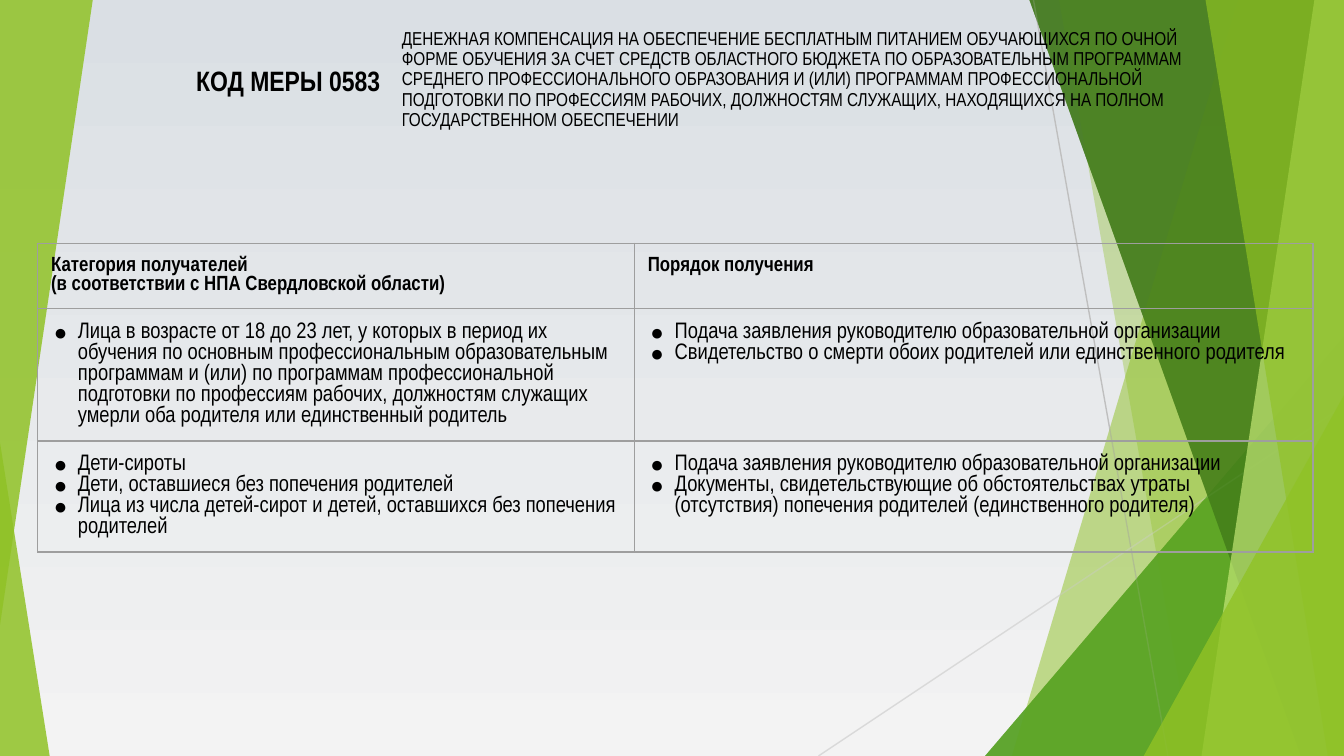
from lxml.etree import SubElement
from pptx import Presentation
from pptx.dml.color import RGBColor
from pptx.enum.shapes import MSO_CONNECTOR, MSO_SHAPE
from pptx.enum.text import MSO_ANCHOR, MSO_AUTO_SIZE, PP_ALIGN
from pptx.oxml.ns import qn
from pptx.util import Inches, Pt

WIDTH = 10
HEIGHT = WIDTH * 9 / 16
FONT = "Arial Narrow"
BLACK = "000000"
BORDER = "9E9E9E"
GREEN = "90C226"

TITLE = (
    "ДЕНЕЖНАЯ КОМПЕНСАЦИЯ НА ОБЕСПЕЧЕНИЕ БЕСПЛАТНЫМ ПИТАНИЕМ ОБУЧАЮЩИХСЯ ПО ОЧНОЙ "
    "ФОРМЕ ОБУЧЕНИЯ ЗА СЧЕТ СРЕДСТВ ОБЛАСТНОГО БЮДЖЕТА ПО ОБРАЗОВАТЕЛЬНЫМ ПРОГРАММАМ "
    "СРЕДНЕГО ПРОФЕССИОНАЛЬНОГО ОБРАЗОВАНИЯ И (ИЛИ) ПРОГРАММАМ ПРОФЕССИОНАЛЬНОЙ "
    "ПОДГОТОВКИ ПО ПРОФЕССИЯМ РАБОЧИХ, ДОЛЖНОСТЯМ СЛУЖАЩИХ, НАХОДЯЩИХСЯ НА ПОЛНОМ "
    "ГОСУДАРСТВЕННОМ ОБЕСПЕЧЕНИИ"
)
CODE = "КОД МЕРЫ 0583"
APPLICATION = "Подача заявления руководителю образовательной организации"
ROWS = [
    (["Категория получателей \v(в соответствии с НПА Свердловской области)"],
     ["Порядок получения"]),
    (["Лица в возрасте от 18 до 23 лет, у которых в период их обучения по основным "
      "профессиональным образовательным программам и (или) по программам "
      "профессиональной подготовки по профессиям рабочих, должностям служащих "
      "умерли оба родителя или единственный родитель"],
     [APPLICATION,
      "Свидетельство о смерти обоих родителей или единственного родителя"]),
    (["Дети-сироты",
      "Дети, оставшиеся без попечения родителей",
      "Лица из числа детей-сирот и детей, оставшихся без попечения родителей"],
     [APPLICATION,
      "Документы, свидетельствующие об обстоятельствах утраты (отсутствия) "
      "попечения родителей (единственного родителя)"]),
]
COLUMN_WIDTHS = [4.44, 5.05]
ROW_HEIGHTS = [0.46, 0.61, 0.57]

RIGHT_FACETS = [
    ("wedge", 9.21, 7.53, GREEN, 30),
    ("wedge", 7.88, 8.87, GREEN, 20),
    ("triangle", 7.33, 2.5, "54A021", 72),
    ("wedge", 7.66, 9.68, "3F7819", 70),
    ("wedge", 9.78, 8.94, "C0E474", 70),
    ("wedge", 8.97, 9.88, GREEN, 65),
    ("triangle", 8.51, 2.94, GREEN, 80),
]
RAYS = [((7.69, 0), (8.69, HEIGHT), "BFBFBF"), ((10, 3.02), (6.09, HEIGHT), "D9D9D9")]


def color(value):
    return RGBColor.from_string(value)


def paint(shape, fill, opacity):
    shape.shadow.inherit = False
    shape.line.fill.background()
    shape.fill.solid()
    shape.fill.fore_color.rgb = color(fill)
    solid = shape.element.spPr.find(qn("a:solidFill"))
    SubElement(solid[0], qn("a:alpha"), val=str(opacity * 1000))


def add_triangle(shapes, left, top, width, height, apex, fill, opacity):
    triangle = shapes.add_shape(
        MSO_SHAPE.ISOSCELES_TRIANGLE, Inches(left), Inches(top), Inches(width), Inches(height))
    triangle.adjustments[0] = apex
    paint(triangle, fill, opacity)
    return triangle


def add_facets(shapes):
    for kind, first, second, fill, opacity in RIGHT_FACETS:
        if kind == "triangle":
            add_triangle(shapes, first, second, WIDTH - first, HEIGHT - second, 1, fill, opacity)
        else:
            right, bottom = Inches(WIDTH), Inches(HEIGHT)
            builder = shapes.build_freeform(Inches(first), 0)
            builder.add_line_segments([(right, 0), (right, bottom), (Inches(second), bottom)])
            paint(builder.convert_to_shape(), fill, opacity)


def add_ray(shapes, start, end, stroke):
    points = [Inches(value) for value in start + end]
    ray = shapes.add_connector(MSO_CONNECTOR.STRAIGHT, *points)
    ray.line.color.rgb = color(stroke)
    ray.line.width = Pt(0.75)
    SubElement(ray.element.spPr, qn("a:effectLst"))


def format_text(paragraph, size, bold=False):
    for run in paragraph.runs:
        run.font.name = FONT
        run.font.size = Pt(size)
        run.font.bold = bold
        run.font.color.rgb = color(BLACK)


def set_frame(text_frame, horizontal, vertical):
    text_frame.word_wrap = True
    text_frame.auto_size = MSO_AUTO_SIZE.NONE
    text_frame.vertical_anchor = MSO_ANCHOR.MIDDLE
    text_frame.margin_left = text_frame.margin_right = Inches(horizontal)
    text_frame.margin_top = text_frame.margin_bottom = Inches(vertical)


def add_bullet(paragraph):
    properties = paragraph._p.get_or_add_pPr()
    properties.set("marL", str(Inches(0.2)))
    properties.set("indent", str(Inches(-0.18)))
    bullet_color = SubElement(properties, qn("a:buClr"))
    SubElement(bullet_color, qn("a:srgbClr"), val=BLACK)
    SubElement(properties, qn("a:buFont"), typeface="Arial")
    SubElement(properties, qn("a:buChar"), char="●")


def fill_cell(cell, texts, header):
    cell.margin_left = cell.margin_right = Inches(0.1)
    cell.margin_top = cell.margin_bottom = Inches(0.1)
    cell.text_frame.text = "\n".join(texts)
    for paragraph in cell.text_frame.paragraphs:
        format_text(paragraph, 11 if header else 12, header)
        if not header:
            add_bullet(paragraph)
    properties = cell._tc.get_or_add_tcPr()
    for side in ("a:lnL", "a:lnR", "a:lnT", "a:lnB"):
        line = SubElement(properties, qn(side), w=str(Pt(0.75)))
        SubElement(SubElement(line, qn("a:solidFill")), qn("a:srgbClr"), val=BORDER)
    cell.fill.background()


def add_measure_table(shapes):
    frame = shapes.add_table(
        len(ROWS), len(COLUMN_WIDTHS), Inches(0.28), Inches(1.81), Inches(9.49), Inches(2.77))
    table = frame.table
    table.first_row = table.horz_banding = False
    for column, width in zip(table.columns, COLUMN_WIDTHS):
        column.width = Inches(width)
    for row, height in zip(table.rows, ROW_HEIGHTS):
        row.height = Inches(height)
    for row_index, row in enumerate(ROWS):
        for column_index, texts in enumerate(row):
            fill_cell(table.cell(row_index, column_index), texts, row_index == 0)


def add_heading(slide):
    title = slide.shapes.title
    title.left, title.top, title.width, title.height = map(Inches, (2.92, 0.22, 6.3, 0.75))
    title.text_frame.text = TITLE
    set_frame(title.text_frame, 0.07, 0.04)
    paragraph = title.text_frame.paragraphs[0]
    paragraph.alignment = PP_ALIGN.LEFT
    paragraph.line_spacing = 0.9
    format_text(paragraph, 10)
    title.element.getparent().append(title.element)

    code = slide.shapes.add_textbox(Inches(0.82), Inches(0.22), Inches(2.11), Inches(0.75))
    code.text_frame.text = CODE
    set_frame(code.text_frame, 0.1, 0.1)
    code.text_frame.paragraphs[0].alignment = PP_ALIGN.RIGHT
    format_text(code.text_frame.paragraphs[0], 15, True)


def main():
    presentation = Presentation()
    presentation.slide_width, presentation.slide_height = Inches(WIDTH), Inches(HEIGHT)
    slide = presentation.slides.add_slide(presentation.slide_layouts[5])
    background = slide.background.fill
    background.gradient()
    background.gradient_angle = 270
    for stop, value, position in zip(background.gradient_stops, ("DADFE4", "F3F3F3"), (0, 1)):
        stop.color.rgb = color(value)
        stop.position = position

    shapes = slide.shapes
    add_facets(shapes)
    add_triangle(shapes, 0, 3.29, 0.37, HEIGHT - 3.29, 0, GREEN, 85)
    for start, end, stroke in RAYS:
        add_ray(shapes, start, end, stroke)
    add_facets(shapes)
    add_triangle(shapes, 0, 0, 0.69, 4.65, 1, GREEN, 85).rotation = 180
    add_measure_table(shapes)
    add_heading(slide)
    presentation.save("out.pptx")


if __name__ == "__main__":
    main()
